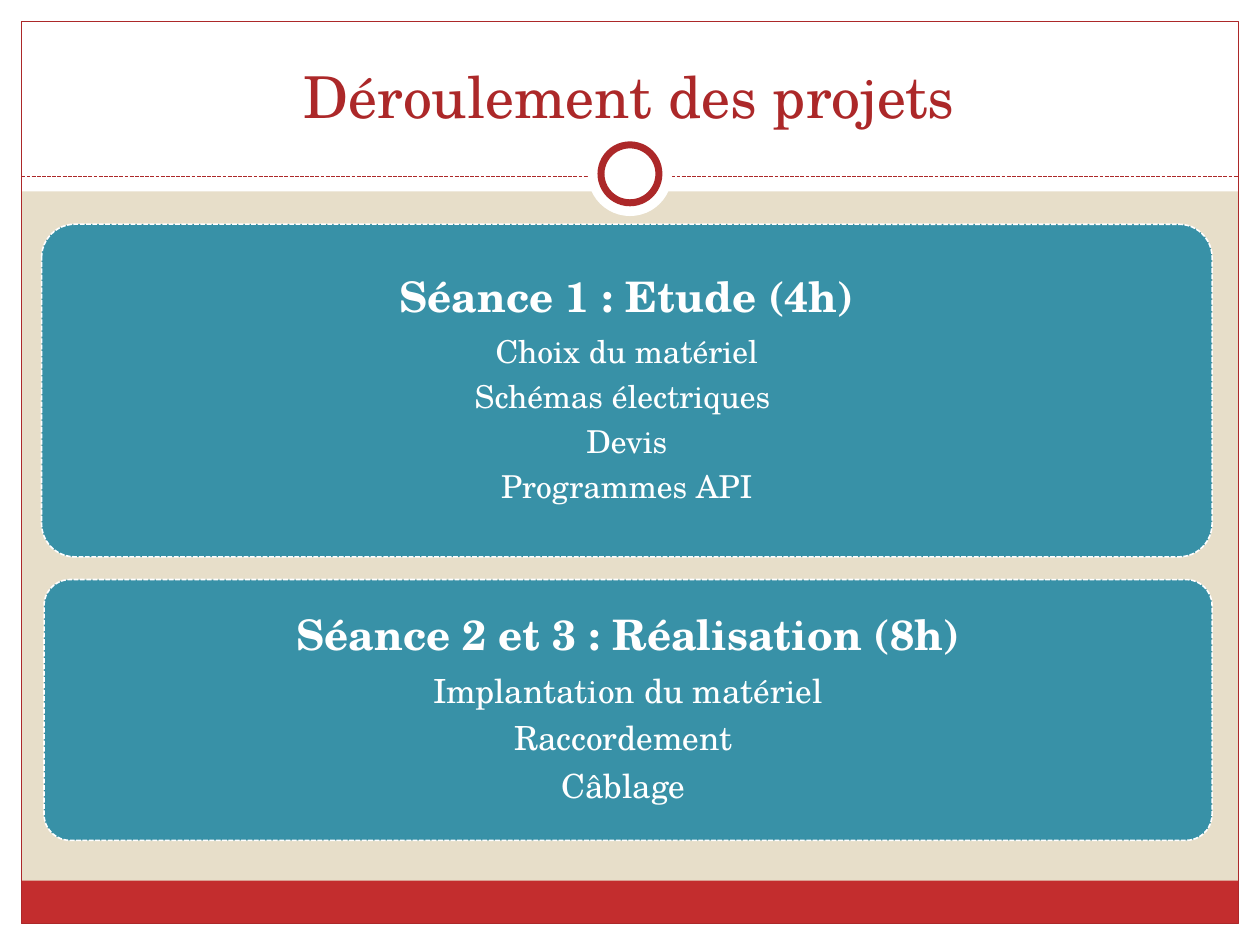
from pptx import Presentation
from pptx.dml.color import RGBColor
from pptx.enum.dml import MSO_LINE as Dash
from pptx.enum.shapes import MSO_CONNECTOR as Link, MSO_SHAPE as Kind
from pptx.enum.text import MSO_ANCHOR as Anchor, PP_ALIGN as Align
from pptx.oxml.ns import qn
from pptx.util import Inches, Pt
from lxml.etree import SubElement

HUES = {"sand": "E7DEC9", "white": "FFFFFF", "red": "C32D2E",
        "dark": "AC2829", "teal": "3891A7"}
FONT = "TeX Gyre Schola"
WIDE, HIGH = 10, 7.5
EDGE = 0.17          # white margin round the slide
HEAD = 1.52          # height of the white title band
RULE = 1.4           # height of the dashed rule
MID = WIDE / 2


def hue(name):
    return RGBColor.from_string(HUES[name])


def add_text(frame, text, size=18, color="white", bold=False, lead=1, after=0):
    """Fill the frame's empty first paragraph, or append a new one."""
    para = frame.paragraphs[0]
    if para.runs:
        para = frame.add_paragraph()
    para.alignment = Align.CENTER
    para.line_spacing = lead
    para.space_after = Pt(after)
    run = para.add_run()
    run.text = text
    run.font.name, run.font.size, run.font.bold = FONT, Pt(size), bold
    run.font.color.rgb = hue(color)


deck = Presentation()
deck.slide_width, deck.slide_height = Inches(WIDE), Inches(HIGH)
slide = deck.slides.add_slide(deck.slide_layouts[6])
slide.background.fill.solid()
slide.background.fill.fore_color.rgb = hue("sand")

# Frame: white margins, red foot, thin outline
inner = WIDE - 2 * EDGE
base = HIGH - EDGE
parts = [
    (Kind.RECTANGLE, 0, base, WIDE, EDGE, "white", None),
    (Kind.RECTANGLE, 0, 0, WIDE, HEAD, "white", None),
    (Kind.RECTANGLE, 0, 0, EDGE, HIGH, "white", None),
    (Kind.RECTANGLE, WIDE - EDGE, 0, EDGE, HIGH, "white", None),
    (Kind.RECTANGLE, EDGE, base - 0.34, inner, 0.34, "red", None),
    (Kind.RECTANGLE, EDGE, EDGE, inner, HIGH - 2 * EDGE, None, ("dark", 0.75)),
]
# Ring centred on the rule, over a white disc
for size, line in ((0.67, None), (0.46, ("dark", 4))):
    parts.append((Kind.OVAL, MID - size / 2, 1.38 - size / 2, size, size,
                  "white", line))
# Cards for the sessions
cards = [
    (0.33, 1.78, 9.29, 2.64, 18, "Séance 1 : Etude (4h)",
     ["Choix du matériel", "Schémas électriques ", "Devis", "Programmes API"]),
    (0.35, 4.6, 9.27, 2.07, 19, "Séance 2 et 3 : Réalisation (8h)",
     ["Implantation du matériel", "Raccordement ", "Câblage "]),
]
for *box, size, head, items in cards:
    parts.append((Kind.ROUNDED_RECTANGLE, *box, "teal", ("white", 0.9)))

shapes = []
for kind, *box, fill, line in parts:
    if kind == Kind.OVAL and line is None:
        rule = slide.shapes.add_connector(
            Link.STRAIGHT, Inches(EDGE), Inches(RULE),
            Inches(WIDE - EDGE), Inches(RULE))
        rule.line.color.rgb = hue("dark")
        rule.line.width = Pt(0.75)
        rule.line.dash_style = Dash.SQUARE_DOT
        SubElement(rule._element.spPr, qn("a:effectLst"))
    shape = slide.shapes.add_shape(kind, *map(Inches, box))
    shape.shadow.inherit = False
    if fill:
        shape.fill.solid()
        shape.fill.fore_color.rgb = hue(fill)
    else:
        shape.fill.background()
    if line:
        shape.line.color.rgb = hue(line[0])
        shape.line.width = Pt(line[1])
    else:
        shape.line.fill.background()
    shapes.append(shape)

title = slide.shapes.add_textbox(*map(Inches, (0.33, 0.25, 9.33, 0.83)))
title.text_frame.word_wrap = True
title.text_frame.vertical_anchor = Anchor.BOTTOM
add_text(title.text_frame, "Déroulement des projets", size=33, color="dark")

for shape, (*box, size, head, items) in zip(shapes[-len(cards):], cards):
    shape.adjustments[0] = 0.1
    shape.line.dash_style = Dash.SQUARE_DOT
    frame = shape.text_frame
    frame.word_wrap = True
    frame.vertical_anchor = Anchor.MIDDLE
    frame.margin_left = frame.margin_right = Inches(0.1)
    frame.margin_top = frame.margin_bottom = Inches(0.1)
    add_text(frame, head, size=24, bold=True, lead=0.9, after=0.35 * 24)
    for item in items:
        add_text(frame, item, size=size, lead=0.9, after=0.35 * size)

deck.save("out.pptx")
